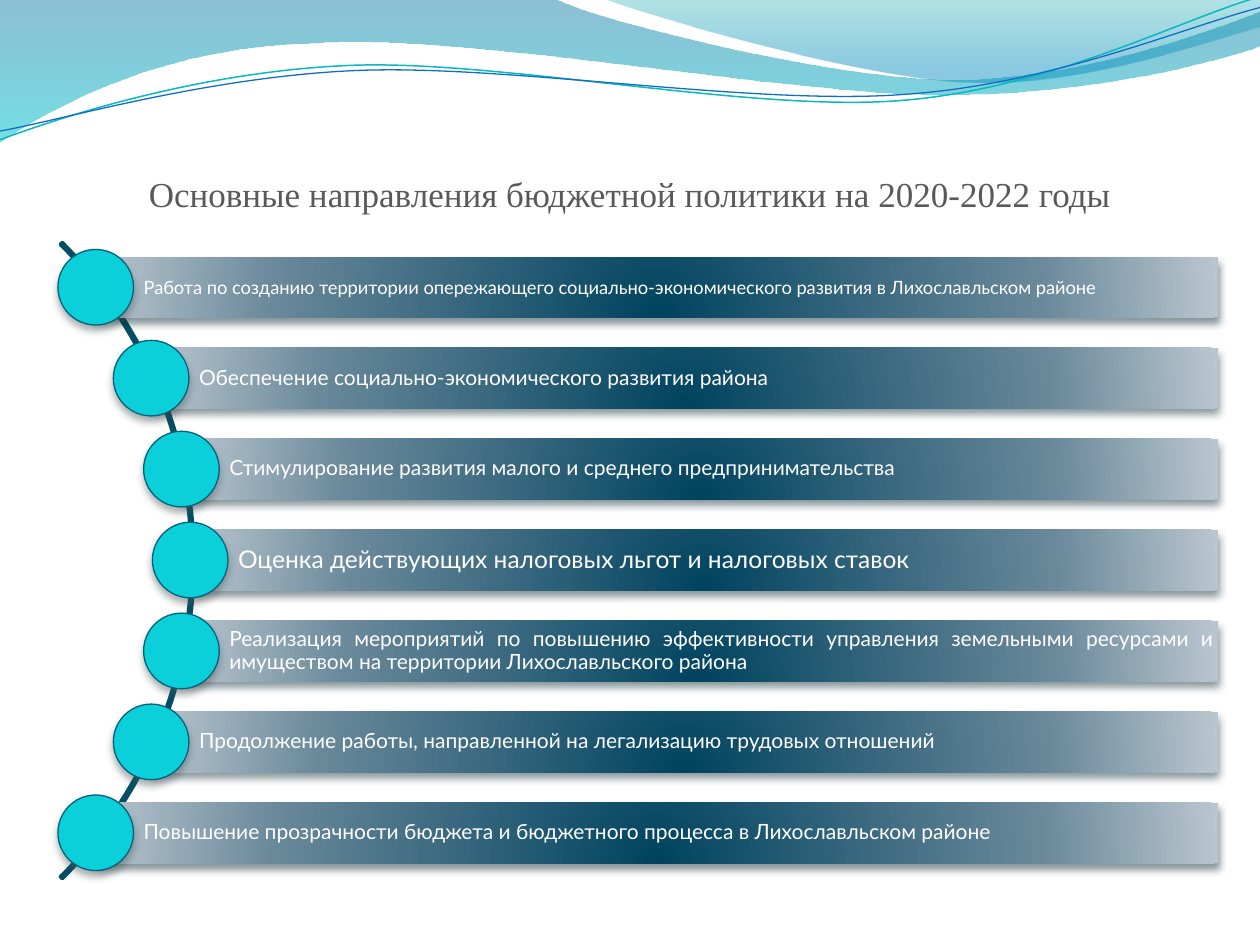
from lxml.etree import Element, SubElement
from pptx import Presentation
from pptx.dml.color import RGBColor
from pptx.enum.shapes import MSO_SHAPE
from pptx.enum.text import MSO_ANCHOR, PP_ALIGN
from pptx.oxml.ns import qn
from pptx.util import Inches, Pt

WHITE = RGBColor(0xFF, 0xFF, 0xFF)
TITLE_GREY = RGBColor(0x59, 0x59, 0x59)
ARC_TEAL = RGBColor(0x03, 0x4E, 0x63)
DOT_FILL = RGBColor(0x0B, 0xD0, 0xD9)
DOT_LINE = RGBColor(0x04, 0x61, 0x7B)
BAR_SHADOW = RGBColor(0x00, 0x23, 0x2C)
DOT_SHADOW = RGBColor(0x4D, 0x56, 0x58)
WAVE_TEAL = RGBColor(0x0A, 0xB8, 0xBF)
WAVE_BLUE = RGBColor(0x0F, 0x6F, 0xC6)

# Gradient stops: position %, colour, opacity %
BAR_STOPS = [(0, RGBColor(0x00, 0x43, 0x5F), 100),
             (68, RGBColor(0x69, 0x88, 0x9A), 100),
             (100, RGBColor(0xB9, 0xC6, 0xCF), 100)]
WIDE_STOPS = [(0, RGBColor(0x00, 0x74, 0xA1), 45), (100, RGBColor(0x00, 0xC6, 0xCF), 55)]
CORNER_STOPS = [(0, RGBColor(0x00, 0xA1, 0xA9), 30), (80, RGBColor(0x00, 0x8B, 0xBF), 45)]

# Outlines: a start point, then lines (x, y) or Bezier curves (two controls and an end)
WIDE_WAVE = [(0, 0), (4.4, -0.01), (4.76, 0.17, 6.64, 0.63, 7.58, 0.63),
             (8.53, 0.63, 9.58, 0.26, 10, 0.09), (10.01, 0.36),
             (9.83, 0.44, 8.7, 0.76, 7.46, 0.75), (6.22, 0.75, 3.82, 0.28, 2.57, 0.34),
             (1.29, 0.36, 0.46, 0.83, -0.01, 1.13), (0, 0)]
CORNER_WAVE = [(4.79, -0.01), (5.09, 0.11, 6.82, 0.62, 7.69, 0.65),
               (8.56, 0.69, 9.61, 0.32, 10, 0.21), (10, 0), (4.79, -0.01)]
TEAL_CURVE = [(0, 1.11), (0.48, 0.93, 1.58, 0.57, 2.77, 0.52),
              (3.95, 0.47, 5.93, 0.89, 7.13, 0.8), (8.33, 0.71, 9.38, 0.15, 9.98, -0.02)]
BLUE_CURVE = [(0, 1.04), (0.47, 0.96, 1.64, 0.61, 2.83, 0.56),
              (4.03, 0.51, 5.97, 0.84, 7.17, 0.75), (8.36, 0.67, 9.41, 0.21, 10, 0.06)]

JUSTIFY, LEFT = PP_ALIGN.JUSTIFY, PP_ALIGN.LEFT
# Bar left edge, text size, line spacing, alignment, text
DIRECTIONS = [
    (0.76, 10.5, 1.0, JUSTIFY, "Работа по созданию территории опережающего социально-экономического "
                               "развития в Лихославльском районе"),
    (1.2, 12, 0.9, JUSTIFY, "Обеспечение социально-экономического развития района"),
    (1.44, 12, 0.9, JUSTIFY, "Стимулирование развития малого и среднего предпринимательства"),
    (1.51, 14, 0.9, LEFT, "Оценка действующих налоговых льгот и налоговых ставок"),
    (1.44, 12, 0.9, JUSTIFY, "Реализация мероприятий по повышению эффективности управления "
                             "земельными ресурсами и имуществом на территории "
                             "Лихославльского района"),
    (1.2, 12, 0.9, JUSTIFY, "Продолжение работы, направленной на легализацию трудовых отношений"),
    (0.76, 12, 0.9, JUSTIFY, "Повышение прозрачности бюджета и бюджетного процесса "
                             "в Лихославльском районе"),
]
FIRST_TOP, LAST_TOP, BAR_HEIGHT, BAR_RIGHT = 2.04, 6.37, 0.48, 9.67
BAR_STEP = (LAST_TOP - FIRST_TOP) / (len(DIRECTIONS) - 1)
DOT_SIZE = 0.6


def add_color(parent, color, opacity):
    clr = SubElement(parent, qn("a:srgbClr"), val=str(color))
    if opacity < 100:
        SubElement(clr, qn("a:alpha"), val=str(opacity * 1000))


def set_gradient(sp, stops, radial=False):
    """Fill from top to bottom, or outwards from the middle if radial."""
    sp.fill.gradient()
    grad = sp.element.spPr.find(qn("a:gradFill"))
    for child in list(grad):
        grad.remove(child)
    gs_list = SubElement(grad, qn("a:gsLst"))
    for pos, color, opacity in stops:
        add_color(SubElement(gs_list, qn("a:gs"), pos=str(pos * 1000)), color, opacity)
    if radial:
        circle = SubElement(grad, qn("a:path"), path="circle")
        SubElement(circle, qn("a:fillToRect"), l="50000", t="130000", r="50000", b="-30000")
    else:
        SubElement(grad, qn("a:lin"), ang="5400000", scaled="0")


def set_shadow(sp, color):
    sp.shadow.inherit = False
    effects = sp.element.spPr.find(qn("a:effectLst"))
    shadow = SubElement(effects, qn("a:outerShdw"), blurRad=str(Pt(4.5)), dist=str(Pt(3)),
                        dir="5400000", rotWithShape="0")
    add_color(shadow, color, 48)


def set_line(sp, color, width):
    sp.line.color.rgb = color
    sp.line.width = Pt(width)


def format_run(p, font, size, color):
    r = p.runs[0]
    r.font.name = font
    r.font.size = Pt(size)
    r.font.color.rgb = color


def add_outline(slide, outline, close):
    """Build a freeform through the end points, then bend its curved segments."""
    ends = [(Inches(seg[-2]), Inches(seg[-1])) for seg in outline]
    builder = slide.shapes.build_freeform(*ends[0])
    builder.add_line_segments(ends[1:], close=close)
    sp = builder.convert_to_shape()
    sp.shadow.inherit = False
    lines = list(sp.element.spPr.iter(qn("a:lnTo")))
    for line, seg in zip(lines, outline[1:]):
        if len(seg) == 6:
            curve = Element(qn("a:cubicBezTo"))
            for x, y in zip(seg[::2], seg[1::2]):
                SubElement(curve, qn("a:pt"), x=str(Inches(x) - sp.left),
                           y=str(Inches(y) - sp.top))
            line.getparent().replace(line, curve)
    return sp


def add_wave(slide, outline, stops):
    sp = add_outline(slide, outline, True)
    set_gradient(sp, stops)
    sp.line.fill.background()


def add_curve(slide, outline, color, width):
    sp = add_outline(slide, outline, False)
    sp.fill.background()
    set_line(sp, color, width)


def format_title(slide, text):
    title = slide.shapes.title
    title.left, title.top = Inches(0.5), Inches(1.17)
    title.width, title.height = Inches(9), Inches(0.53)
    tf = title.text_frame
    tf.text = text
    tf.vertical_anchor = MSO_ANCHOR.BOTTOM
    tf.margin_left = tf.margin_right = tf.margin_bottom = 0
    tf.margin_top = Inches(0.05)
    p = tf.paragraphs[0]
    p.alignment = PP_ALIGN.CENTER
    format_run(p, "Times New Roman", 20, TITLE_GREY)


def add_arc(slide):
    sp = slide.shapes.add_shape(MSO_SHAPE.BLOCK_ARC, Inches(-5.6), Inches(0.88),
                                Inches(7.14), Inches(7.14))
    for i, value in enumerate((189, 27, 0.003)):
        sp.adjustments[i] = value
    sp.fill.background()
    set_line(sp, ARC_TEAL, 2)
    sp.shadow.inherit = False


def add_bar(slide, left, top, size, spacing, alignment, text):
    sp = slide.shapes.add_shape(MSO_SHAPE.RECTANGLE, Inches(left), Inches(top),
                                Inches(BAR_RIGHT - left), Inches(BAR_HEIGHT))
    set_gradient(sp, BAR_STOPS, radial=True)
    sp.line.fill.background()
    set_shadow(sp, BAR_SHADOW)
    tf = sp.text_frame
    tf.text = text
    tf.word_wrap = True
    tf.vertical_anchor = MSO_ANCHOR.MIDDLE
    tf.margin_left = Inches(0.38)
    tf.margin_right = tf.margin_top = tf.margin_bottom = Inches(0.03)
    p = tf.paragraphs[0]
    p.alignment = alignment
    p.line_spacing = spacing
    format_run(p, "Lato", size, WHITE)


def add_dot(slide, center_x, center_y):
    sp = slide.shapes.add_shape(MSO_SHAPE.OVAL, Inches(center_x - DOT_SIZE / 2),
                                Inches(center_y - DOT_SIZE / 2),
                                Inches(DOT_SIZE), Inches(DOT_SIZE))
    sp.fill.solid()
    sp.fill.fore_color.rgb = DOT_FILL
    set_line(sp, DOT_LINE, 0.75)
    set_shadow(sp, DOT_SHADOW)


def main():
    prs = Presentation()
    prs.slide_width, prs.slide_height = Inches(10), Inches(7.5)
    slide = prs.slides.add_slide(prs.slide_layouts[5])
    add_wave(slide, WIDE_WAVE, WIDE_STOPS)
    add_wave(slide, CORNER_WAVE, CORNER_STOPS)
    add_curve(slide, TEAL_CURVE, WAVE_TEAL, 0.85)
    add_curve(slide, BLUE_CURVE, WAVE_BLUE, 0.75)
    format_title(slide, "Основные направления бюджетной политики на 2020-2022 годы")
    add_arc(slide)
    for i, (left, *text_format) in enumerate(DIRECTIONS):
        top = FIRST_TOP + i * BAR_STEP
        add_bar(slide, left, top, *text_format)
        add_dot(slide, left, top + BAR_HEIGHT / 2)
    prs.save("out.pptx")


if __name__ == "__main__":
    main()
